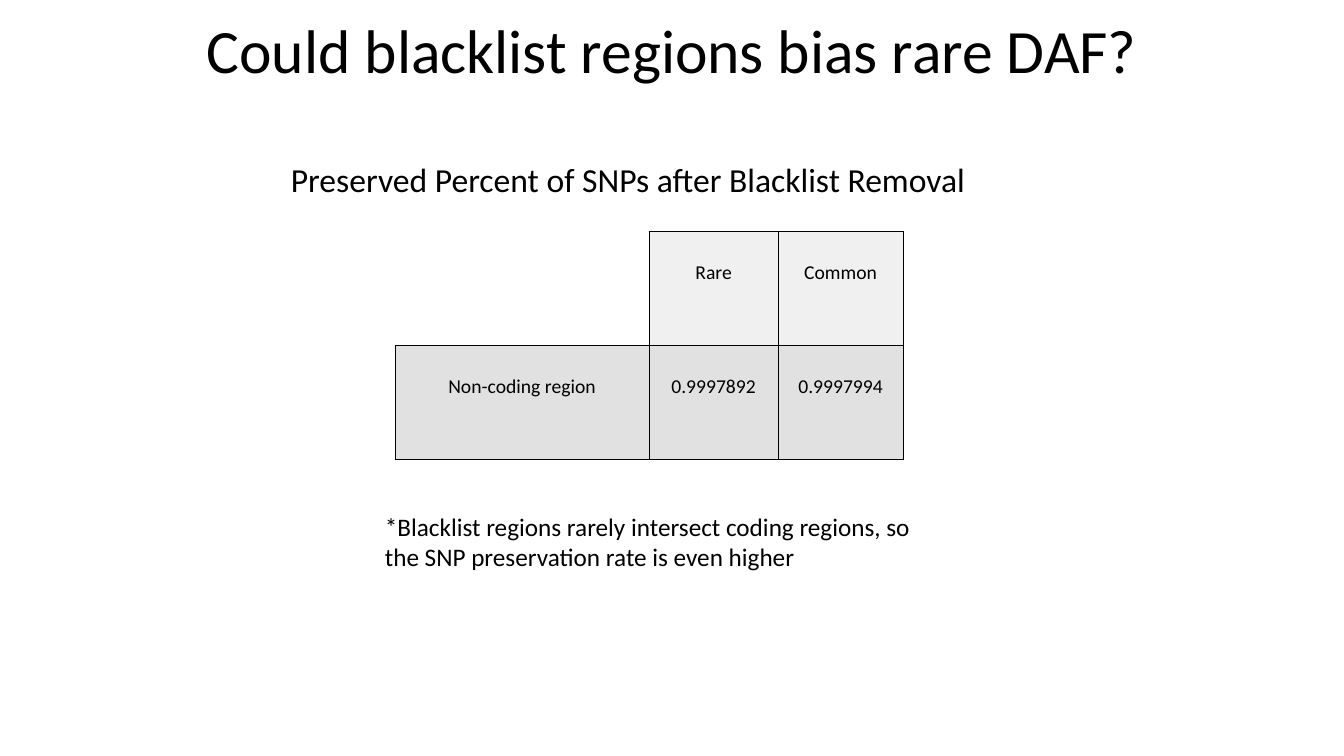
from lxml.etree import SubElement
from pptx import Presentation
from pptx.dml.color import RGBColor
from pptx.enum.text import MSO_ANCHOR, MSO_AUTO_SIZE, PP_ALIGN
from pptx.oxml.ns import qn
from pptx.util import Inches, Pt

FONT = "Calibri"
BLACK = "000000"
HEADER_FILL = "F0F0F0"
BODY_FILL = "E1E1E1"
ROWS = [["", "Rare", "Common"],
        ["Non-coding region", "0.9997892", "0.9997994"]]
COLUMN_SHARES = [50, 25.4, 24.6]


def rgb(value):
    return RGBColor.from_string(value)


def share(length, percent):
    return round(length * percent / 100)


def slide_box(prs, left, top, width, height):
    return (share(prs.slide_width, left), share(prs.slide_height, top),
            share(prs.slide_width, width), share(prs.slide_height, height))


def write(tf, text, size, align):
    tf.text = text
    p = tf.paragraphs[0]
    p.alignment = align
    for r in p.runs:
        r.font.name = FONT
        r.font.size = Pt(size)
        r.font.bold = False
        r.font.color.rgb = rgb(BLACK)


def add_title(s, box, text):
    sp = s.shapes.title
    sp.left, sp.top, sp.width, sp.height = box
    tf = sp.text_frame
    tf.auto_size = MSO_AUTO_SIZE.NONE
    tf.vertical_anchor = MSO_ANCHOR.MIDDLE
    write(tf, text, 44, PP_ALIGN.CENTER)
    tf.paragraphs[0].line_spacing = 0.9


def add_text(s, box, text, size, align):
    tf = s.shapes.add_textbox(*box).text_frame
    tf.word_wrap = True
    write(tf, text, size, align)


def set_borders(cell, visible):
    tc_pr = cell._tc.get_or_add_tcPr()
    for i, side in enumerate(["lnL", "lnR", "lnT", "lnB"]):
        ln = SubElement(tc_pr, qn(f"a:{side}"), w=str(Pt(1)))
        if side in visible:
            fill = SubElement(ln, qn("a:solidFill"))
            SubElement(fill, qn("a:srgbClr"), val=BLACK)
        else:
            SubElement(ln, qn("a:noFill"))
        tc_pr.insert(i, ln)


def add_snp_table(s, box):
    table = s.shapes.add_table(len(ROWS), len(COLUMN_SHARES), *box).table
    table.first_row = False
    table.horz_banding = False
    for column, percent in zip(table.columns, COLUMN_SHARES):
        column.width = share(box[2], percent)
    for i, values in enumerate(ROWS):
        for j, value in enumerate(values):
            cell = table.cell(i, j)
            cell.margin_top = Inches(0.29)
            write(cell.text_frame, value, 14, PP_ALIGN.CENTER)
            if value:
                cell.fill.solid()
                cell.fill.fore_color.rgb = rgb(BODY_FILL if i else HEADER_FILL)
                set_borders(cell, ["lnL", "lnR", "lnT", "lnB"])
            else:
                cell.fill.background()
                set_borders(cell, ["lnR", "lnB"])


def build_slide(prs):
    s = prs.slides.add_slide(prs.slide_layouts[5])
    add_title(s, slide_box(prs, 6.9, -2.53, 86.25, 19.33),
              "Could blacklist regions bias rare DAF?")
    add_snp_table(s, slide_box(prs, 29.4, 30.67, 37.8, 30.13))
    add_text(s, slide_box(prs, 10.88, 20.4, 71.7, 6.67),
             "Preserved Percent of SNPs after Blacklist Removal", 24, PP_ALIGN.CENTER)
    add_text(s, slide_box(prs, 27.9, 66.93, 40.88, 9.47),
             "*Blacklist regions rarely intersect coding regions, so the SNP "
             "preservation rate is even higher", 18, PP_ALIGN.LEFT)


def main():
    prs = Presentation()
    prs.slide_width = Inches(13.33)
    prs.slide_height = Inches(7.5)
    build_slide(prs)
    prs.save("out.pptx")


if __name__ == "__main__":
    main()
